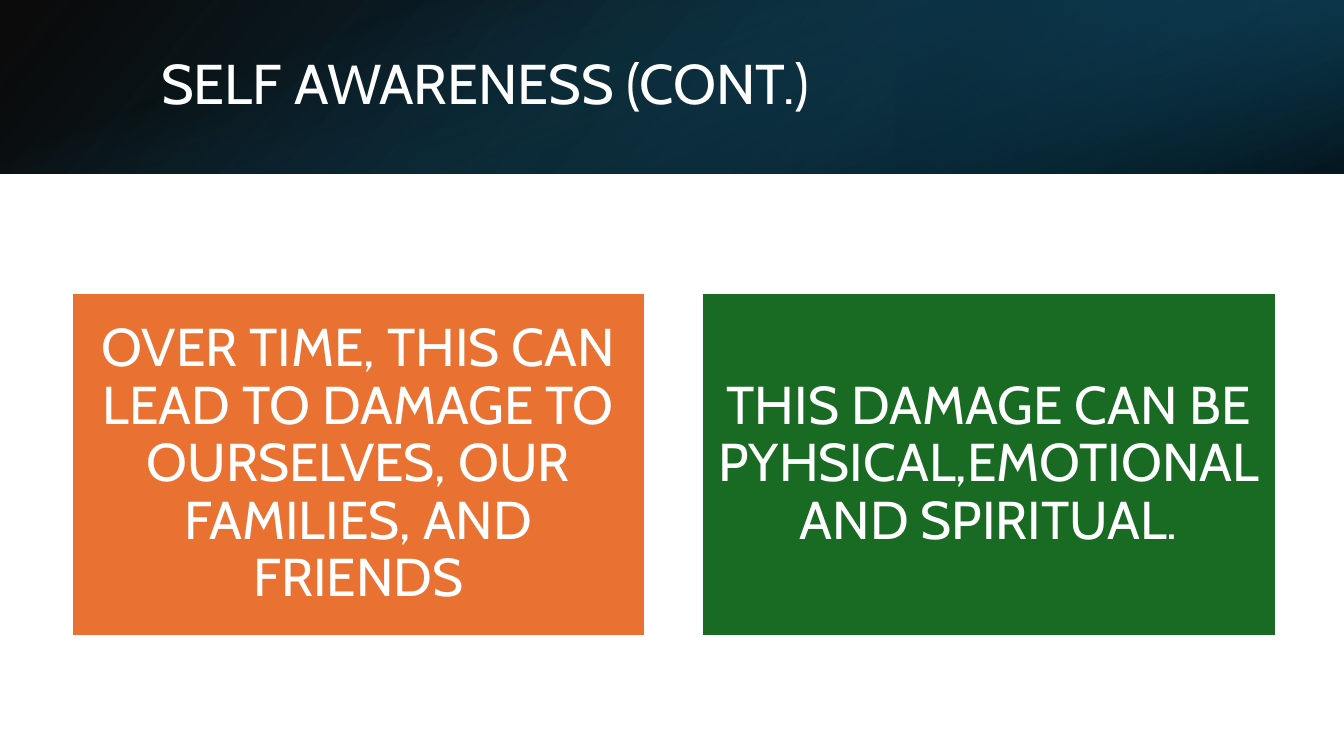
import pptx
import pptx.dml.color
import pptx.enum.shapes
import pptx.enum.text
import pptx.oxml
import pptx.util
from lxml import etree

Pt = pptx.util.Pt
FONT = "Cabin"
WHITE = "FFFFFF"
PAGE_WIDTH, PAGE_HEIGHT = 960, 540
BAND_HEIGHT = 124

TITLE = "SELF AWARENESS (CONT.)"
CARDS = [
    ("OVER TIME, THIS CAN LEAD TO DAMAGE TO OURSELVES, OUR FAMILIES, AND FRIENDS", "E97132"),
    ("THIS DAMAGE CAN BE PYHSICAL,EMOTIONAL AND SPIRITUAL.", "196B24"),
]
CARD_LEFT, CARD_TOP, CARD_WIDTH, CARD_HEIGHT, CARD_STEP = 51.2, 209, 409.6, 245.6, 450.4
CARD_INSET = 11.4

# left, width as seen, rotation, flipped, gradient angle, stops (position, colour, opacity)
BANDS = [
    (0, PAGE_WIDTH, 0, True, 140, [(0, "000000", 96), (100, "104862", 100)]),
    (640, 320, 180, True, 320, [(19, "0B3041", 68), (100, "156082", 79)]),
    (0, PAGE_WIDTH, 90, False, 340, [(23, "156082", 0), (99, "000000", 74)]),
]


def color(value):
    return pptx.dml.color.RGBColor.from_string(value)


def add_rectangle(page, left, top, width, height):
    box = page.shapes.add_shape(
        pptx.enum.shapes.MSO_SHAPE.RECTANGLE, Pt(left), Pt(top), Pt(width), Pt(height))
    box.shadow.inherit = False
    return box


def set_gradient(box, angle, stops):
    """Fill with a linear gradient whose stops have their own opacity."""
    box.fill.gradient()
    gradient = box.element.spPr.find(pptx.oxml.ns.qn("a:gradFill"))
    for child in list(gradient):
        gradient.remove(child)
    stop_list = etree.SubElement(gradient, pptx.oxml.ns.qn("a:gsLst"))
    for position, value, opacity in stops:
        stop = etree.SubElement(stop_list, pptx.oxml.ns.qn("a:gs"), pos=str(position * 1000))
        shade = etree.SubElement(stop, pptx.oxml.ns.qn("a:srgbClr"), val=value)
        etree.SubElement(shade, pptx.oxml.ns.qn("a:alpha"), val=str(opacity * 1000))
    etree.SubElement(gradient, pptx.oxml.ns.qn("a:lin"), ang=str(angle * 60000), scaled="0")


def add_band(page, left, width, rotation, flipped, angle, stops):
    if rotation == 90:
        shift = (width - BAND_HEIGHT) / 2
        box = add_rectangle(page, left + shift, -shift, BAND_HEIGHT, width)
    else:
        box = add_rectangle(page, left, 0, width, BAND_HEIGHT)
    box.rotation = rotation
    if flipped:
        box.element.spPr.find(pptx.oxml.ns.qn("a:xfrm")).set("flipH", "1")
    set_gradient(box, angle, stops)
    box.line.fill.background()


def write(frame, text, size, alignment):
    frame.word_wrap = True
    frame.auto_size = pptx.enum.text.MSO_AUTO_SIZE.NONE
    frame.vertical_anchor = pptx.enum.text.MSO_ANCHOR.MIDDLE
    frame.text = text
    para = frame.paragraphs[0]
    para.alignment = alignment
    para.line_spacing = 0.9
    para.font.name = FONT
    para.font.size = Pt(size)
    para.font.color.rgb = color(WHITE)


def add_card(page, index, text, fill):
    box = add_rectangle(page, CARD_LEFT + index * CARD_STEP, CARD_TOP, CARD_WIDTH, CARD_HEIGHT)
    box.fill.solid()
    box.fill.fore_color.rgb = color(fill)
    box.line.color.rgb = color(WHITE)
    box.line.width = Pt(1.5)
    frame = box.text_frame
    frame.margin_left = frame.margin_right = Pt(CARD_INSET)
    frame.margin_top = frame.margin_bottom = Pt(CARD_INSET)
    write(frame, text, 38, pptx.enum.text.PP_ALIGN.CENTER)


def main():
    deck = pptx.Presentation()
    deck.slide_width, deck.slide_height = Pt(PAGE_WIDTH), Pt(PAGE_HEIGHT)
    page = deck.slides.add_slide(deck.slide_layouts[5])
    for band in BANDS:
        add_band(page, *band)

    title = page.shapes.title
    title.left, title.top, title.width, title.height = Pt(108), Pt(27.4), Pt(790.6), Pt(69)
    write(title.text_frame, TITLE, 40, pptx.enum.text.PP_ALIGN.LEFT)
    title.element.getparent().append(title.element)  # in front of the bands

    for index, (text, fill) in enumerate(CARDS):
        add_card(page, index, text, fill)
    deck.save("out.pptx")


if __name__ == "__main__":
    main()
